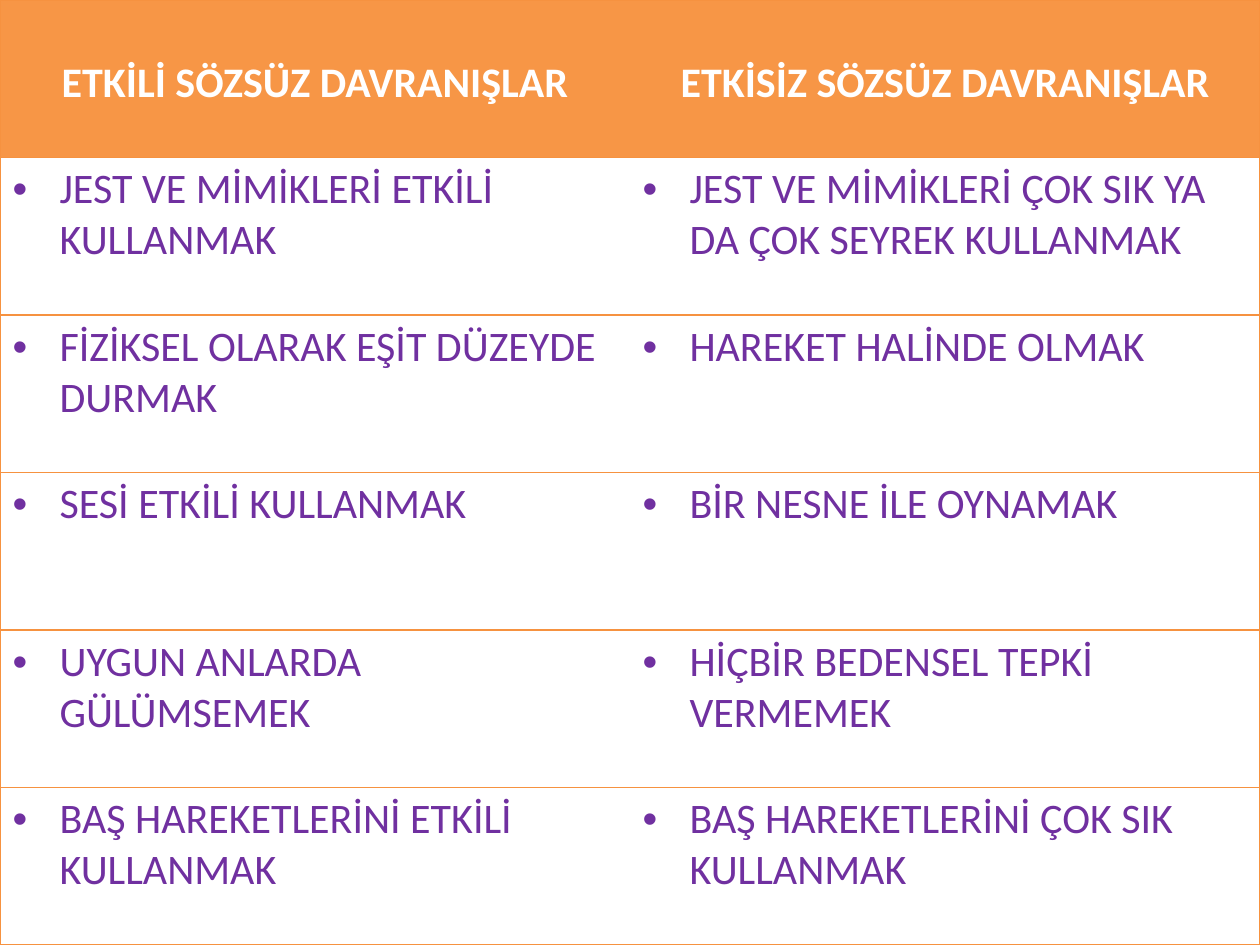
"""Build a slide with a table of effective and ineffective nonverbal behaviour."""
from typing import NamedTuple

from lxml import etree
from pptx import Presentation
from pptx.dml.color import RGBColor
from pptx.enum.text import PP_ALIGN
from pptx.oxml.ns import qn
from pptx.util import Emu, Pt

CENTER = PP_ALIGN.CENTER
LEFT = PP_ALIGN.LEFT
ORANGE = RGBColor(0xF7, 0x96, 0x46)
EDGE = RGBColor(0xF6, 0x92, 0x40)
PURPLE = RGBColor(0x70, 0x30, 0xA0)
WHITE = RGBColor(0xFF, 0xFF, 0xFF)
FONT = "Calibri"
SIZE = Pt(24)
LINE = Pt(0.75)
WIDE, HIGH = 1260, 945
HEAD_TOP = 58
INDENT = 47


class Pair(NamedTuple):
    good: str
    bad: str


HEAD = Pair("ETKİLİ SÖZSÜZ DAVRANIŞLAR", "ETKİSİZ SÖZSÜZ DAVRANIŞLAR")
BODY = [
    Pair("JEST VE MİMİKLERİ ETKİLİ KULLANMAK",
         "JEST VE MİMİKLERİ ÇOK SIK YA DA ÇOK SEYREK KULLANMAK"),
    Pair("FİZİKSEL OLARAK EŞİT DÜZEYDE DURMAK", "HAREKET HALİNDE OLMAK"),
    Pair("SESİ ETKİLİ KULLANMAK", "BİR NESNE İLE OYNAMAK"),
    Pair("UYGUN ANLARDA GÜLÜMSEMEK", "HİÇBİR BEDENSEL TEPKİ VERMEMEK"),
    Pair("BAŞ HAREKETLERİNİ ETKİLİ KULLANMAK",
         "BAŞ HAREKETLERİNİ ÇOK SIK KULLANMAK"),
]


def px(count: int) -> Emu:
    return Emu(round(count * 914400 / 126))


def add_edges(cell, sides: str) -> None:
    props = cell._tc.get_or_add_tcPr()
    for side in "LRTB":
        line = etree.SubElement(props, qn(f"a:ln{side}"), w=str(LINE))
        if side in sides:
            fill = etree.SubElement(line, qn("a:solidFill"))
            etree.SubElement(fill, qn("a:srgbClr"), val=str(EDGE))
        else:
            etree.SubElement(line, qn("a:noFill"))


def add_bullet(para) -> None:
    props = para._p.get_or_add_pPr()
    props.set("marL", str(px(INDENT)))
    props.set("indent", str(-px(INDENT)))
    etree.SubElement(props, qn("a:buFont"), typeface="Arial")
    etree.SubElement(props, qn("a:buChar"), char="•")


def fill_cell(cell, text: str, sides: str, is_head: bool) -> None:
    add_edges(cell, sides)
    cell.text_frame.text = text
    para = cell.text_frame.paragraphs[0]
    para.alignment = CENTER if is_head else LEFT
    if is_head:
        cell.fill.solid()
        cell.fill.fore_color.rgb = ORANGE
        cell.margin_top = px(HEAD_TOP)
    else:
        cell.fill.background()
        add_bullet(para)
    font = para.runs[0].font
    font.name, font.size, font.bold = FONT, SIZE, is_head
    font.color.rgb = WHITE if is_head else PURPLE


def add_grid(slide, pairs: list[Pair]) -> None:
    frame = slide.shapes.add_table(len(pairs), 2, 0, 0, px(WIDE), px(HIGH))
    table = frame.table
    table.first_row = table.horz_banding = False
    for row, pair in enumerate(pairs):
        for col, text in enumerate(pair):
            fill_cell(table.cell(row, col), text, "LR"[col] + "TB", row == 0)


def main() -> None:
    deck = Presentation()
    deck.slide_width, deck.slide_height = px(WIDE), px(HIGH)
    slide = deck.slides.add_slide(deck.slide_layouts[6])
    add_grid(slide, [HEAD, *BODY])
    deck.save("out.pptx")


if __name__ == "__main__":
    main()
